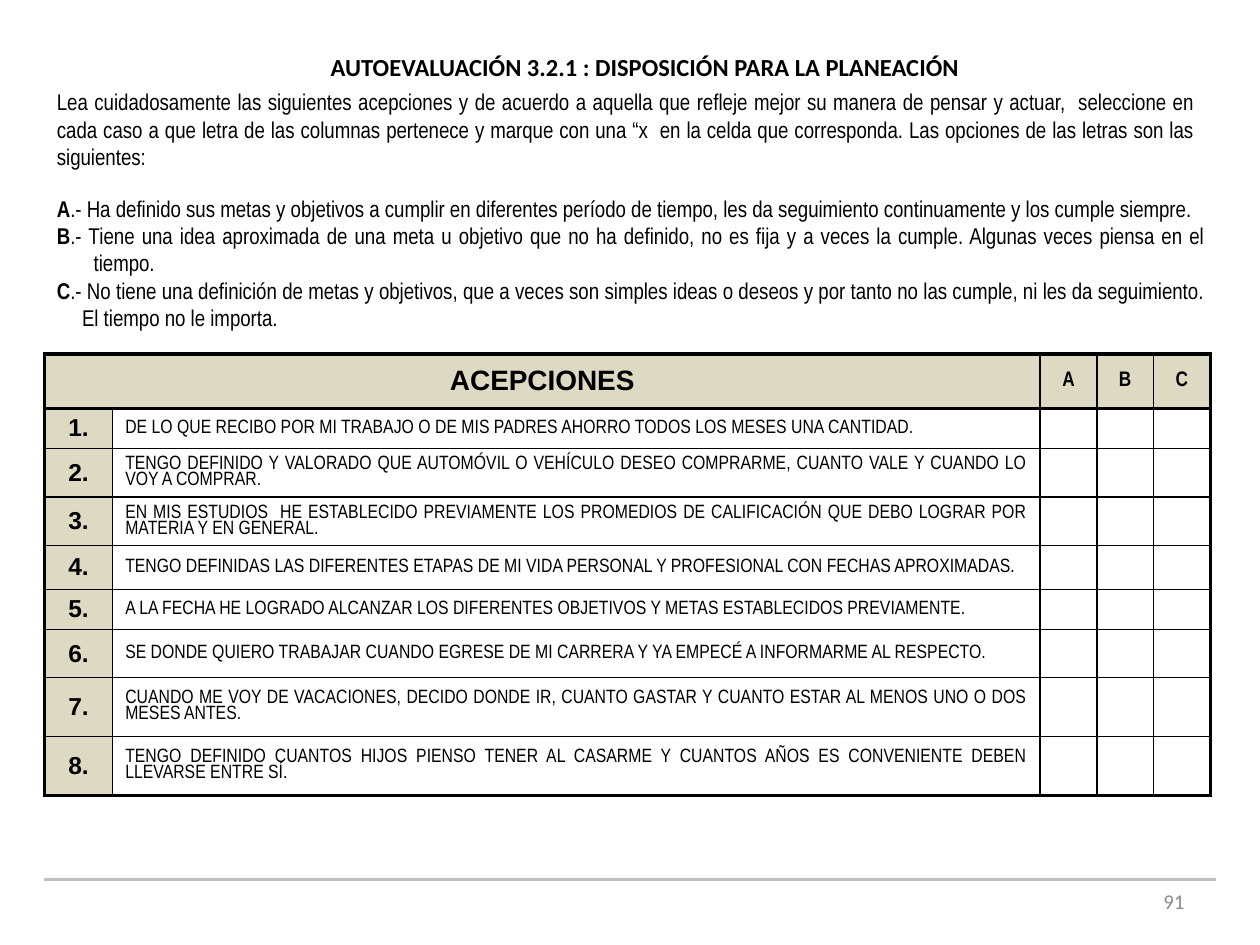
from lxml.etree import SubElement
from pptx import Presentation
from pptx.dml.color import RGBColor as RGB
from pptx.enum.shapes import MSO_CONNECTOR as CONN
from pptx.enum.text import MSO_ANCHOR as ANCHOR, PP_ALIGN as ALIGN
from pptx.oxml.ns import qn
from pptx.util import Pt

COLORS = {"ink": "000000", "header": "DDD9C3", "rule": "BFBFBF", "number": "8C8C8C"}
NARROW = "Arial Narrow"

TITLE = "AUTOEVALUACIÓN 3.2.1 : DISPOSICIÓN PARA LA PLANEACIÓN"
INTRO = (
    "Lea cuidadosamente las siguientes acepciones y de acuerdo a aquella que refleje mejor "
    "su manera de pensar y actuar,  seleccione en cada caso a que letra de las columnas "
    "pertenece y marque con una “x  en la celda que corresponda. Las opciones de las letras "
    "son las siguientes:"
)
OPTIONS = [
    ("A", ".- Ha definido sus metas y objetivos a cumplir en diferentes período de tiempo, "
          "les da seguimiento continuamente y los cumple siempre.", 0),
    ("B", ".- Tiene una idea aproximada de una meta u objetivo que no ha definido, no es fija "
          "y a veces la cumple. Algunas veces piensa en el tiempo.", 21),
    ("C", ".- No tiene una definición de metas y objetivos, que a veces son simples ideas o "
          "deseos y por tanto no las cumple, ni les da seguimiento. El tiempo no le importa.", 14.4),
]
STATEMENTS = [
    ("DE LO QUE RECIBO POR MI TRABAJO O DE MIS PADRES AHORRO TODOS LOS MESES UNA CANTIDAD.", 23),
    ("TENGO DEFINIDO Y VALORADO QUE AUTOMÓVIL O VEHÍCULO DESEO COMPRARME, CUANTO VALE Y "
     "CUANDO LO VOY A COMPRAR.", 25.7),
    ("EN MIS ESTUDIOS  HE ESTABLECIDO PREVIAMENTE LOS PROMEDIOS DE CALIFICACIÓN QUE DEBO "
     "LOGRAR POR MATERIA Y EN GENERAL.", 25.7),
    ("TENGO DEFINIDAS LAS DIFERENTES ETAPAS DE MI VIDA PERSONAL Y PROFESIONAL CON FECHAS "
     "APROXIMADAS.", 25),
    ("A LA FECHA HE LOGRADO ALCANZAR LOS DIFERENTES OBJETIVOS Y METAS ESTABLECIDOS "
     "PREVIAMENTE.", 23),
    ("SE DONDE QUIERO TRABAJAR CUANDO EGRESE DE MI CARRERA Y YA EMPECÉ A INFORMARME AL "
     "RESPECTO.", 27.4),
    ("CUANDO ME VOY DE VACACIONES, DECIDO DONDE IR, CUANTO GASTAR Y CUANTO ESTAR AL MENOS "
     "UNO O DOS MESES ANTES.", 33.7),
    ("TENGO DEFINIDO CUANTOS HIJOS PIENSO TENER AL CASARME Y CUANTOS AÑOS ES CONVENIENTE "
     "DEBEN LLEVARSE ENTRE SÍ.", 33.7),
]
COLUMNS = [39, 530, 32.4, 32.4, 32.4]
HEADER_HEIGHT = 31
CELL_MARGIN = 2
THIN, THICK = 1, 2.25


def rgb(name):
    return RGB.from_string(COLORS[name])


def write(p, text, size=13, font=NARROW, bold=False, color="ink", align=None, spacing=None):
    if align is not None:
        p.alignment = align
    if spacing:
        p.line_spacing = spacing
    r = p.add_run()
    r.text = text
    r.font.size, r.font.name, r.font.bold = Pt(size), font, bold
    r.font.color.rgb = rgb(color)


def text_box(s, left, top, width, height):
    tf = s.shapes.add_textbox(Pt(left), Pt(top), Pt(width), Pt(height)).text_frame
    tf.word_wrap = True
    tf.vertical_anchor = ANCHOR.MIDDLE
    return tf


def set_borders(cell, **widths):
    tc_pr = cell._tc.get_or_add_tcPr()
    for side in "LRTB":
        ln = SubElement(tc_pr, qn(f"a:ln{side}"), w=str(int(Pt(widths[side]))))
        fill = SubElement(ln, qn("a:solidFill"))
        SubElement(fill, qn("a:srgbClr"), val=COLORS["ink"])


def add_statements(s):
    n_rows, n_cols = len(STATEMENTS) + 1, len(COLUMNS)
    heights = [HEADER_HEIGHT] + [height for _, height in STATEMENTS]
    frame = s.shapes.add_table(n_rows, n_cols, Pt(25.4), Pt(202.3),
                               Pt(sum(COLUMNS)), Pt(sum(heights)))
    table = frame.table
    table.first_row = table.horz_banding = False
    for column, width in zip(table.columns, COLUMNS):
        column.width = Pt(width)
    for row, height in zip(table.rows, heights):
        row.height = Pt(height)
    for i in range(n_rows):
        for j in range(n_cols):
            cell = table.cell(i, j)
            cell.vertical_anchor = ANCHOR.MIDDLE
            cell.margin_top = cell.margin_bottom = Pt(CELL_MARGIN)
            set_borders(
                cell,
                L=THICK if j == 0 else THIN,
                R=THICK if j == n_cols - 1 else THIN,
                T=THICK if i <= 1 else THIN,
                B=THICK if i in (0, n_rows - 1) else THIN,
            )
            if i == 0 or j == 0:
                cell.fill.solid()
                cell.fill.fore_color.rgb = rgb("header")
            else:
                cell.fill.background()
            p = cell.text_frame.paragraphs[0]
            if i and j == 0:
                write(p, f"{i}.", size=14, font="Arial", bold=True, align=ALIGN.CENTER)
            elif i and j == 1:
                write(p, STATEMENTS[i - 1][0], size=11, align=ALIGN.JUSTIFY, spacing=0.9)
            elif i == 0 and j > 1:
                write(p, OPTIONS[j - 2][0], size=12, bold=True, align=ALIGN.CENTER)
            else:
                SubElement(p._p, qn("a:endParaRPr"), sz="1100")
    heading = table.cell(0, 0)
    heading.merge(table.cell(0, 1))
    write(heading.text_frame.paragraphs[0], "ACEPCIONES", size=16, font="Arial",
          bold=True, align=ALIGN.CENTER)


def main():
    prs = Presentation()
    prs.slide_width, prs.slide_height = Pt(720), Pt(540)
    s = prs.slides.add_slide(prs.slide_layouts[6])

    rule = s.shapes.add_connector(CONN.STRAIGHT, Pt(25.2), Pt(502.6), Pt(694.8), Pt(502.6))
    rule.line.color.rgb = rgb("rule")
    rule.line.width = Pt(2)
    SubElement(rule._element.spPr, qn("a:effectLst"))

    write(text_box(s, 516, 500.4, 168, 28.8).paragraphs[0], "91", size=12,
          font="Calibri", color="number", align=ALIGN.RIGHT)
    add_statements(s)
    write(text_box(s, 42.5, 26, 652.3, 24).paragraphs[0], TITLE, size=14,
          font="Calibri", bold=True, align=ALIGN.CENTER)
    write(text_box(s, 25.4, 46.8, 663, 54).paragraphs[0], INTRO, align=ALIGN.JUSTIFY)

    tf = text_box(s, 25.4, 107.3, 669, 85.7)
    for i, (letter, meaning, indent) in enumerate(OPTIONS):
        p = tf.add_paragraph() if i else tf.paragraphs[0]
        if indent:
            p_pr = p._p.get_or_add_pPr()
            p_pr.set("marL", str(int(Pt(indent))))
            p_pr.set("indent", str(-int(Pt(indent))))
        write(p, letter, bold=True, align=ALIGN.JUSTIFY)
        write(p, meaning)

    prs.save("out.pptx")


if __name__ == "__main__":
    main()
